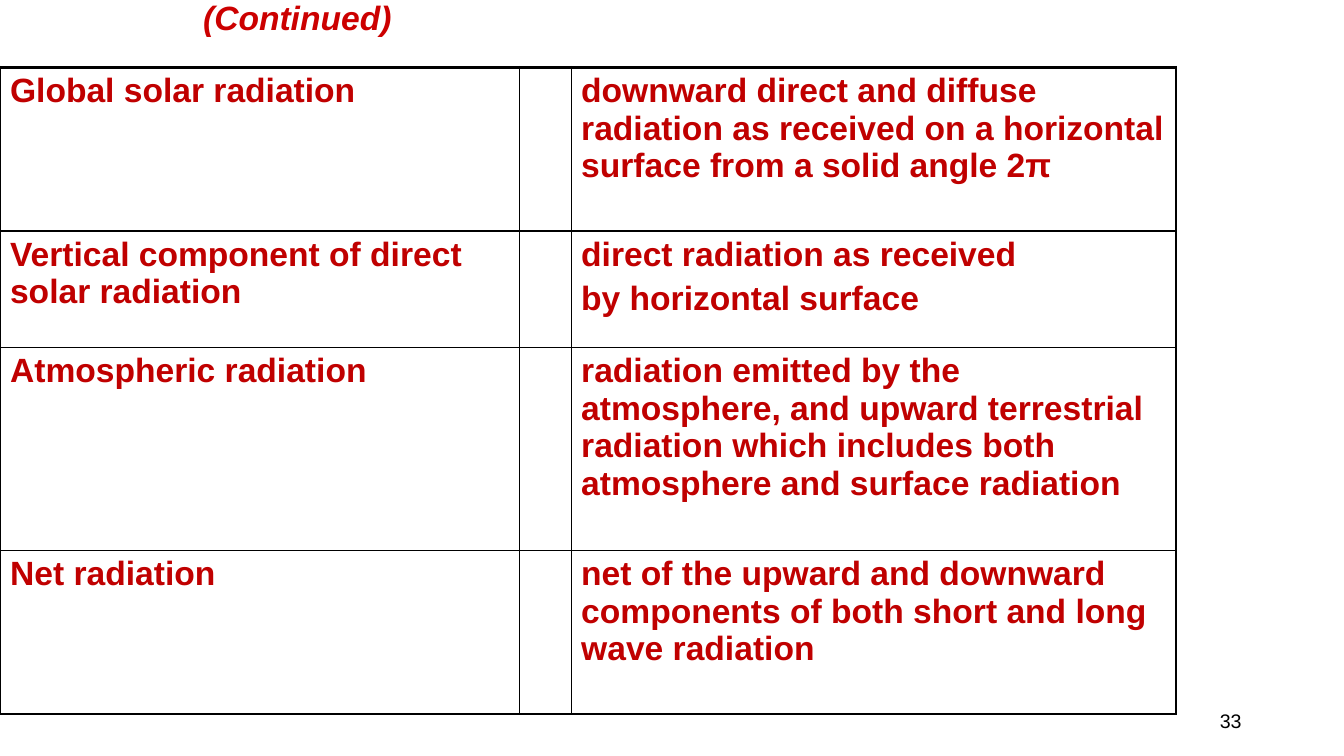
import pptx
import pptx.dml.color
import pptx.enum.text
import pptx.oxml.ns
import pptx.util
from lxml import etree

PX = 9525
COLORS = {"heading": "CC0000", "term": "C00000", "ink": "000000"}
FONT = "Arial"
COLUMNS = [495, 49, 576]
ROWS = [
    (156, ["Global solar radiation"],
     ["downward direct and diffuse radiation as received on a horizontal "
      "surface from a solid angle 2π"]),
    (111, ["Vertical component of direct solar radiation"],
     ["direct radiation as received", "by horizontal surface"]),
    (193, ["Atmospheric radiation"],
     ["radiation emitted by the atmosphere, and upward terrestrial radiation "
      "which includes both atmosphere and surface radiation"]),
    (156, ["Net radiation"],
     ["net of the upward and downward components of both short and long "
      "wave radiation"]),
]


def px(value):
    """Turn whole pixels into EMU."""
    return pptx.util.Emu(value * PX)


def add_span(para, text, size, color, bold=False, italic=False):
    """Add one styled run to a paragraph."""
    span = para.add_run()
    span.text = text
    span.font.name = FONT
    span.font.size = pptx.util.Pt(size)
    span.font.bold = bold
    span.font.italic = italic
    span.font.color.rgb = pptx.dml.color.RGBColor.from_string(COLORS[color])


def set_borders(cell, widths):
    """Draw the cell sides, given widths in points for L, R, T and B."""
    properties = cell._tc.get_or_add_tcPr()
    for index, (side, width) in enumerate(widths.items()):
        line = etree.Element(pptx.oxml.ns.qn(f"a:ln{side}"),
                             w=str(pptx.util.Pt(width)))
        fill = etree.SubElement(line, pptx.oxml.ns.qn("a:solidFill"))
        etree.SubElement(fill, pptx.oxml.ns.qn("a:srgbClr"), val=COLORS["ink"])
        properties.insert(index, line)


def fill_cell(cell, lines):
    """Write the lines of a cell as spaced paragraphs."""
    frame = cell.text_frame
    for index, text in enumerate(lines):
        para = frame.add_paragraph() if index else frame.paragraphs[0]
        if index:
            para.space_before = pptx.util.Pt(4.8)
        add_span(para, text, 24, "term", bold=True)


def add_definitions(page, left, top):
    """Add the table of radiation terms with a thick outer frame."""
    heights = [row[0] for row in ROWS]
    table = page.shapes.add_table(
        len(ROWS), len(COLUMNS), px(left), px(top),
        px(sum(COLUMNS)), px(sum(heights))).table
    table.first_row = table.horz_banding = False
    for column, width in zip(table.columns, COLUMNS):
        column.width = px(width)
    last_row, last_column = len(ROWS) - 1, len(COLUMNS) - 1
    for r, (height, term, meaning) in enumerate(ROWS):
        table.rows[r].height = px(height)
        for c, lines in enumerate([term, [], meaning]):
            cell = table.cell(r, c)
            cell.fill.background()
            fill_cell(cell, lines)
            outer = {"L": c == 0, "R": c == last_column,
                     "T": r == 0, "B": r == last_row}
            set_borders(cell, {side: 2.25 if edge else 1
                               for side, edge in outer.items()})


def add_heading(page, left, top, width, height):
    """Add the continuation heading."""
    box = page.shapes.add_textbox(px(left), px(top), px(width), px(height))
    frame = box.text_frame
    frame.word_wrap = False
    frame.auto_size = pptx.enum.text.MSO_AUTO_SIZE.SHAPE_TO_FIT_TEXT
    add_span(frame.paragraphs[0], "(Continued)", 24, "heading", True, True)


def add_page_number(page, left, top, width, height):
    """Add the page number at the right of its box."""
    box = page.shapes.add_textbox(px(left), px(top), px(width), px(height))
    frame = box.text_frame
    frame.word_wrap = True
    frame.vertical_anchor = pptx.enum.text.MSO_ANCHOR.MIDDLE
    para = frame.paragraphs[0]
    para.alignment = pptx.enum.text.PP_ALIGN.RIGHT
    add_span(para, "33", 14, "ink")


def main():
    """Build the deck and save it."""
    deck = pptx.Presentation()
    deck.slide_width, deck.slide_height = px(1280), px(720)
    page = deck.slides.add_slide(deck.slide_layouts[6])
    add_definitions(page, 0, 64)
    add_heading(page, 184, -8, 199, 48)
    add_page_number(page, 904, 667, 288, 38)
    deck.save("out.pptx")


if __name__ == "__main__":
    main()
